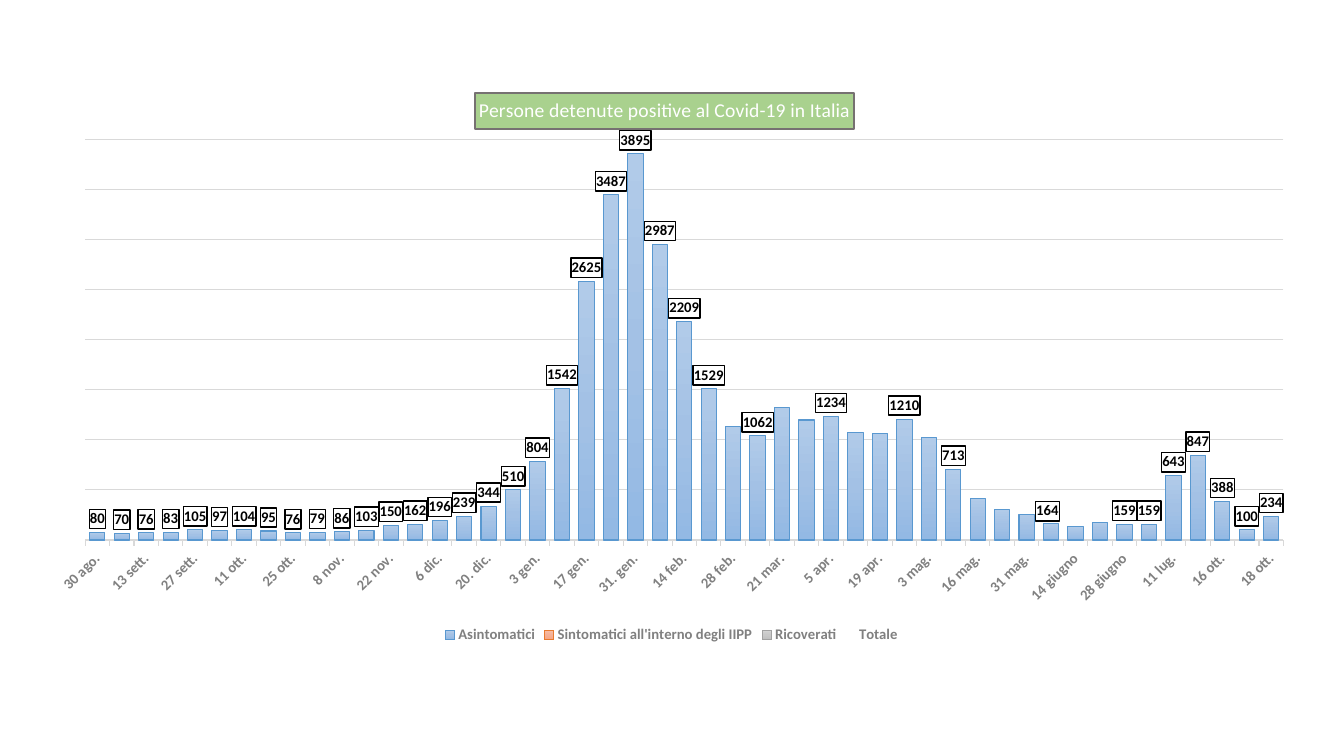
from lxml import etree
from pptx import Presentation
from pptx.chart.data import CategoryChartData
from pptx.dml.color import RGBColor
from pptx.enum.chart import (XL_CHART_TYPE, XL_LABEL_POSITION,
                             XL_LEGEND_POSITION, XL_TICK_LABEL_POSITION, XL_TICK_MARK)
from pptx.oxml import parse_xml
from pptx.oxml.ns import nsdecls, qn
from pptx.util import Cm, Pt

FONT = "Calibri"
INK = {"text": "000000", "axis": "808080", "grid": "D9D9D9", "white": "FFFFFF",
       "title": "A9D18E", "frame": "767171"}

DAYS = """30 ago.|6 sett.|13 sett.|20 sett.|27 sett.|4 ott.|11 ott.|18 ott.|25 ott.|1 nov.
8 nov.|15 nov.|22 nov.|29 nov.|6 dic.|13 dic.|20. dic.|27 dic.|3 gen.|10 gen.
17 gen.|24 gen.|31. gen.|7 feb.|14 feb.|21 feb.|28 feb.| 7 mar.|21 mar.|29 mar.
5 apr.|12 apr.|19 apr.|26 apr.|3 mag.|10 mag.|16 mag.|24 mag.|31 mag.|7 giugno
14 giugno|21 giugno|28 giugno|4 luglio|11 lug.|18 lug.|16 ott.|20 set.|18 ott."""
DAYS = DAYS.replace("\n", "|").split("|")

MILD = [75, 66, 71, 76, 100, 93, 100, 90, 71, 74, 81, 98, 146, 158, 193, 236, 339,
        501, 786, 1511, 2586, 3448, 3859, 2953, 2181, 1510, 1138, 1040, 1322, 1199,
        1232, 1078, 1068, 1208, 1020, 707, 417, 300, 254, 164, 130, 177, 158, 158,
        642, 846, 385, 100, 233]
TOTAL = [80, 70, 76, 83, 105, 97, 104, 95, 76, 79, 86, 103, 150, 162, 196, 239, 344,
         510, 804, 1542, 2625, 3487, 3895, 2987, 2209, 1529, 1160, 1062, 1341, 1208,
         1234, 1080, 1069, 1210, 1022, 713, 420, 302, 256, 164, 130, 178, 159, 159,
         643, 847, 388, 100, 234]
NONE = [0] * len(DAYS)

# Name, values, gradient stops, outline
BARS = [
    ("Asintomatici", MILD, ("B1CBE9", "A3C1E5", "93B9E4"), "5998D0"),
    ("Sintomatici all'interno degli IIPP", NONE, ("F7BDA5", "F5B196", "F8A582"), "E87A30"),
    ("Ricoverati", NONE, ("D2D2D2", "C8C8C8", "C0C0C0"), "A1A1A1"),
    ("Totale", TOTAL, None, None),
]
MUTE = [26, 28, 29, 31, 32, 34, 36, 37, 38, 39, 40, 41]
MOVED = 39


def rgb(code):
    return RGBColor.from_string(code)


def style(font, size, color, bold=True):
    font.name, font.size, font.bold = FONT, Pt(size), bold
    font.color.rgb = rgb(color)


def stroke(line, color, width=0.75):
    line.color.rgb = rgb(color)
    line.width = Pt(width)


def layout(x, y, w=None, h=None, inner=False, edge=True):
    """Manual layout in fractions of the chart."""
    node = etree.Element(qn("c:layout"))
    manual = etree.SubElement(node, qn("c:manualLayout"))
    rows = [("layoutTarget", "inner")] if inner else []
    if edge:
        rows += [("xMode", "edge"), ("yMode", "edge")]
    rows += [("x", x), ("y", y), ("w", w), ("h", h)]
    for tag, val in rows:
        if val is not None:
            etree.SubElement(manual, qn("c:" + tag)).set("val", str(val))
    return node


def frame(labels):
    """White box with a black outline behind the labels."""
    box = parse_xml(
        f'<c:spPr {nsdecls("c", "a")}><a:solidFill><a:srgbClr val="{INK["white"]}"/>'
        f'</a:solidFill><a:ln w="12700"><a:solidFill><a:srgbClr val="{INK["text"]}"/>'
        '</a:solidFill></a:ln></c:spPr>')
    labels.find(qn("c:txPr")).addprevious(box)


def paint(bar, stops, edge):
    if not stops:
        bar.format.fill.background()
        bar.format.line.fill.background()
        return
    stroke(bar.format.line, edge)
    marks = "".join(f'<a:gs pos="{i * 50000}"><a:srgbClr val="{c}"/></a:gs>'
                    for i, c in enumerate(stops))
    fill = parse_xml(f'<a:gradFill {nsdecls("a")} rotWithShape="1"><a:gsLst>{marks}'
                     '</a:gsLst><a:lin ang="5400000" scaled="0"/></a:gradFill>')
    bar._element.find(qn("c:spPr")).insert(0, fill)


def add_title(chart):
    title = chart.chart_title
    para = title.text_frame.paragraphs[0]
    para.text = "Persone detenute positive al Covid-19 in Italia"
    style(para.font, 14, INK["white"], False)
    title.format.fill.solid()
    title.format.fill.fore_color.rgb = rgb(INK["title"])
    stroke(title.format.line, INK["frame"], 1.5)
    node = title._element
    for old in node.findall(qn("c:layout")):
        node.remove(old)
    node.find(qn("c:tx")).addnext(layout(0.346, 0.03))
    title.include_in_layout = True


def add_axes(chart):
    days, count = chart.category_axis, chart.value_axis
    style(days.tick_labels.font, 10.5, INK["axis"])
    days.major_tick_mark = XL_TICK_MARK.OUTSIDE
    days.tick_label_position = XL_TICK_LABEL_POSITION.LOW
    days._element.find(qn("c:txPr")).find(qn("a:bodyPr")).set("rot", "-2700000")
    stroke(days.format.line, INK["grid"])
    count.minimum_scale, count.maximum_scale, count.major_unit = 0, 4000, 500
    count.has_major_gridlines = True
    stroke(count.major_gridlines.format.line, INK["grid"])
    count.visible = False


def add_labels(mild, total):
    # Totals above the stacks
    labels = total.data_labels
    labels.show_value = True
    labels.position = XL_LABEL_POSITION.INSIDE_BASE
    style(labels.font, 10.5, INK["text"])
    node = labels._element
    frame(node)
    for i, idx in enumerate(MUTE):
        node.insert(i, parse_xml(f'<c:dLbl {nsdecls("c")}><c:idx val="{idx}"/>'
                                 '<c:delete val="1"/></c:dLbl>'))
    # One label of the first series, lifted above its bar
    style(mild.points[MOVED].data_label.font, 10.5, INK["text"])
    mild.data_labels.show_value = False
    one = mild.data_labels._element.find(qn("c:dLbl"))
    frame(one)
    one.find(qn("c:idx")).addnext(layout(-0.003, -0.036, edge=False))


def add_cases(slide, left, top, width, height):
    data = CategoryChartData()
    data.categories = DAYS
    for name, vals, _, _ in BARS:
        data.add_series(name, vals)
    chart = slide.shapes.add_chart(XL_CHART_TYPE.COLUMN_STACKED,
                                   left, top, width, height, data).chart
    style(chart.font, 10, INK["text"], False)
    plot = chart.plots[0]
    plot.gap_width, plot.overlap, plot.vary_by_categories = 60, 100, False
    bars = list(plot.series)
    for bar, (_, _, stops, edge) in zip(bars, BARS):
        paint(bar, stops, edge)
    add_title(chart)
    add_axes(chart)
    add_labels(bars[0], bars[-1])
    # Plot area and legend
    area = chart._chartSpace.find(qn("c:chart")).find(qn("c:plotArea"))
    for old in area.findall(qn("c:layout")):
        area.remove(old)
    area.insert(0, layout(0.04, 0.1125, 0.94, 0.699, inner=True))
    chart.has_legend = True
    chart.legend.position = XL_LEGEND_POSITION.BOTTOM
    chart.legend.include_in_layout = False
    style(chart.legend.font, 10.5, INK["axis"])


def main():
    deck = Presentation()
    deck.slide_width, deck.slide_height = Cm(33.87), Cm(19.05)
    slide = deck.slides.add_slide(deck.slide_layouts[6])
    add_cases(slide, Cm(0.86), Cm(1.9), Cm(32.13), Cm(14.43))
    deck.save("out.pptx")


if __name__ == "__main__":
    main()
